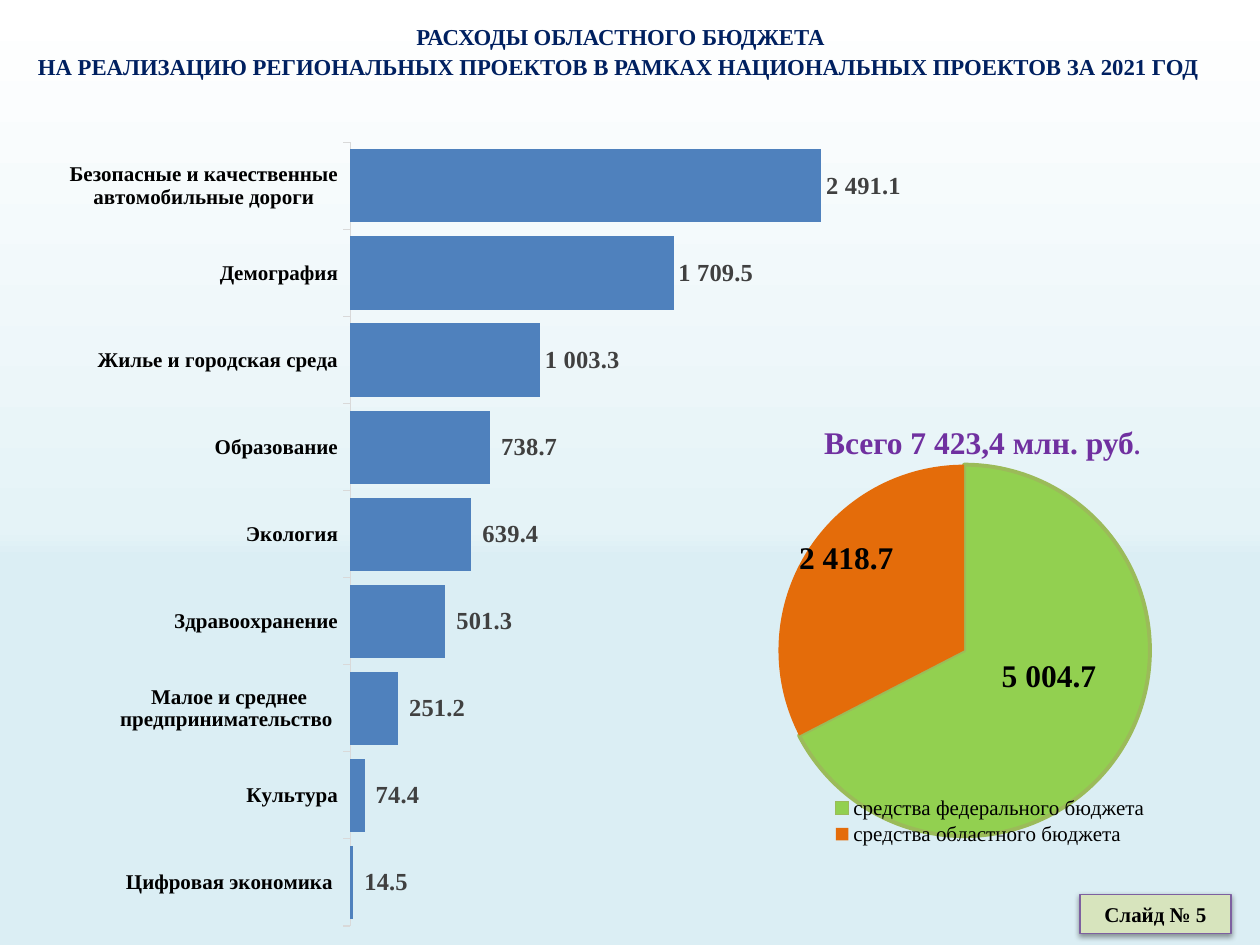
from lxml import etree
from pptx import Presentation
from pptx import util as u
from pptx.chart.data import CategoryChartData
from pptx.dml.color import RGBColor
from pptx.enum import chart as c, shapes, text
from pptx.oxml.ns import qn

COLORS = {
    "navy": "002060", "purple": "7030A0", "black": "000000", "gray": "404040",
    "axis": "D9D9D9", "bar": "4F81BD", "federal": "92D050", "regional": "E46C0A",
    "outline": "9BBB59", "tag": "D7E4BD", "tag_line": "7D60A0",
}
GRADIENT = [(0, "FFFFFF"), (56, "E5F3F7"), (59, "DBEEF4")]
FONT = "Times New Roman"
NUMBER_FORMAT = r"#\ ##0.0"


def style_font(font, size, color, bold=True):
    for name, value in {"name": FONT, "size": u.Pt(size), "bold": bold}.items():
        setattr(font, name, value)
    font.color.rgb = RGBColor.from_string(COLORS[color])


def set_layout(parent, index, **values):
    for old in parent.findall(qn("c:layout")):
        parent.remove(old)
    layout = etree.Element(qn("c:layout"))
    manual = etree.SubElement(layout, qn("c:manualLayout"))
    for name, value in values.items():
        etree.SubElement(manual, qn("c:" + name)).set("val", str(value))
    parent.insert(index, layout)


presentation = Presentation()
presentation.slide_width = u.Cm(25.4)
presentation.slide_height = u.Cm(19.05)
slide = presentation.slides.add_slide(presentation.slide_layouts[6])

background = slide.background.fill
background.gradient()
background.gradient_angle = 270
stops = next(slide.element.iter(qn("a:gsLst")))
for stop in list(stops):
    stops.remove(stop)
for position, color in GRADIENT:
    stop = etree.SubElement(stops, qn("a:gs"), pos=str(position * 1000))
    etree.SubElement(stop, qn("a:srgbClr"), val=color)

title = slide.shapes.add_textbox(u.Cm(0.3), u.Cm(0.33), u.Cm(24.41), u.Cm(1.37))
total = slide.shapes.add_textbox(u.Cm(15.7), u.Cm(8.41), u.Cm(8.2), u.Cm(1.02))

pie_data = CategoryChartData(number_format=NUMBER_FORMAT)
pie_data.categories = ["средства федерального бюджета", "средства областного бюджета"]
pie_data.add_series("Series 1", [5004.7, 2418.7])
pie = slide.shapes.add_chart(
    c.XL_CHART_TYPE.PIE, u.Cm(14.3), u.Cm(8.41), u.Cm(11.1), u.Cm(8.71), pie_data
).chart

projects = [
    ("Цифровая экономика ", 14.5),
    ("Культура", 74.4),
    ("Малое и среднее предпринимательство ", 251.2),
    ("Здравоохранение", 501.3),
    ("Экология", 639.4),
    ("Образование", 738.7),
    ("Жилье и городская среда", 1003.3),
    ("Демография", 1709.5),
    ("Безопасные и качественные автомобильные дороги", 2491.1),
]
bar_data = CategoryChartData(number_format=NUMBER_FORMAT)
bar_data.categories = [name for name, value in projects]
bar_data.add_series("Series 1", [value for name, value in projects])
bars = slide.shapes.add_chart(
    c.XL_CHART_TYPE.BAR_CLUSTERED, u.Cm(0.33), u.Cm(2.44), u.Cm(19.81), u.Cm(16.61), bar_data
).chart

plot_areas = [
    (pie, 0.074, 0.11, 0.778, 0.86, 18, "black"),
    (bars, 0.34, 0.026, 0.577, 0.951, 14, "gray"),
]
for chart, x, y, w, h, size, color in plot_areas:
    chart.has_title = False
    chart.has_legend = False
    chart.font.name = "Calibri"
    chart.font.size = u.Pt(10)
    plot = chart.plots[0]
    plot.vary_by_categories = chart is pie
    labels = plot.series[0].data_labels
    label_format = {
        "show_value": True, "number_format": NUMBER_FORMAT, "number_format_is_linked": False,
    }
    for name, value in label_format.items():
        setattr(labels, name, value)
    style_font(labels.font, size, color)
    plot_area = next(chart.element.iter(qn("c:plotArea")))
    set_layout(plot_area, 0, layoutTarget="inner", xMode="edge", yMode="edge", x=x, y=y, w=w, h=h)

pie_series = pie.plots[0].series[0]
pie_series.format.line.color.rgb = RGBColor.from_string(COLORS["outline"])
pie_series.format.line.width = u.Pt(0.75)
for index, (color, x, y) in enumerate([("federal", 0.01, -0.05), ("regional", -0.07, -0.1)]):
    point = pie_series.points[index]
    point.format.fill.solid()
    point.format.fill.fore_color.rgb = RGBColor.from_string(COLORS[color])
    point.data_label.position = c.XL_LABEL_POSITION.CENTER
    style_font(point.data_label.font, 18, "black")
federal_line = pie_series.points[0].format.line
federal_line.color.rgb = RGBColor.from_string(COLORS["outline"])
federal_line.width = u.Pt(2.25)
pie_series.points[1].format.line.fill.background()
for label, (x, y) in zip(pie.element.iter(qn("c:dLbl")), [(0.01, -0.05), (-0.07, -0.1)]):
    set_layout(label, 1, x=x, y=y)

pie.has_legend = True
pie.legend.position = c.XL_LEGEND_POSITION.BOTTOM
pie.legend.include_in_layout = False
style_font(pie.legend.font, 12, "black", False)
legend = next(pie.element.iter(qn("c:legend")))
set_layout(legend, 1, xMode="edge", yMode="edge", x=0.22, y=0.87, w=0.58, h=0.13)

bar_plot = bars.plots[0]
bar_plot.gap_width = 19
bar_series = bar_plot.series[0]
bar_series.data_labels.position = c.XL_LABEL_POSITION.OUTSIDE_END
bar_series.format.fill.solid()
bar_series.format.fill.fore_color.rgb = RGBColor.from_string(COLORS["bar"])
value_axis_format = {
    "visible": False, "has_major_gridlines": False, "minimum_scale": 0, "maximum_scale": 3000,
}
for name, value in value_axis_format.items():
    setattr(bars.value_axis, name, value)
category_axis = bars.category_axis
category_axis.major_tick_mark = c.XL_TICK_MARK.OUTSIDE
style_font(category_axis.tick_labels.font, 12, "black")
category_axis.format.line.color.rgb = RGBColor.from_string(COLORS["axis"])
category_axis.format.line.width = u.Pt(0.75)

tag = slide.shapes.add_shape(
    shapes.MSO_SHAPE.RECTANGLE, u.Cm(21.77), u.Cm(18.03), u.Cm(3.05), u.Cm(0.79)
)
tag.fill.solid()
tag.fill.fore_color.rgb = RGBColor.from_string(COLORS["tag"])
tag.line.color.rgb = RGBColor.from_string(COLORS["tag_line"])
tag.line.width = u.Pt(0.75)
tag.shadow.inherit = False
effects = next(tag.element.iter(qn("a:effectLst")))
shadow = etree.SubElement(
    effects, qn("a:outerShdw"), blurRad="40000", dist="20000", dir="5400000", rotWithShape="0"
)
shadow_color = etree.SubElement(shadow, qn("a:srgbClr"), val=COLORS["black"])
etree.SubElement(shadow_color, qn("a:alpha"), val="38000")

captions = [
    (title, "navy", [
        [("РАСХОДЫ ОБЛАСТНОГО БЮДЖЕТА", 13)],
        [("НА РЕАЛИЗАЦИЮ РЕГИОНАЛЬНЫХ ПРОЕКТОВ В РАМКАХ НАЦИОНАЛЬНЫХ ПРОЕКТОВ ЗА 2021 ГОД ", 13)],
    ]),
    (total, "purple", [[("Всего 7 423,4 млн. руб", 18), (".", 14)]]),
    (tag, "black", [[("Слайд № 5", 12)]]),
]
for shape, color, lines in captions:
    frame = shape.text_frame
    frame.word_wrap = True
    frame.auto_size = text.MSO_AUTO_SIZE.SHAPE_TO_FIT_TEXT
    for index, runs in enumerate(lines):
        paragraph = frame.add_paragraph() if index else frame.paragraphs[0]
        paragraph.alignment = text.PP_ALIGN.CENTER
        paragraph.space_before = u.Pt(1.5 * index)
        for words, size in runs:
            run = paragraph.add_run()
            run.text = words
            style_font(run.font, size, color)

presentation.save("out.pptx")
